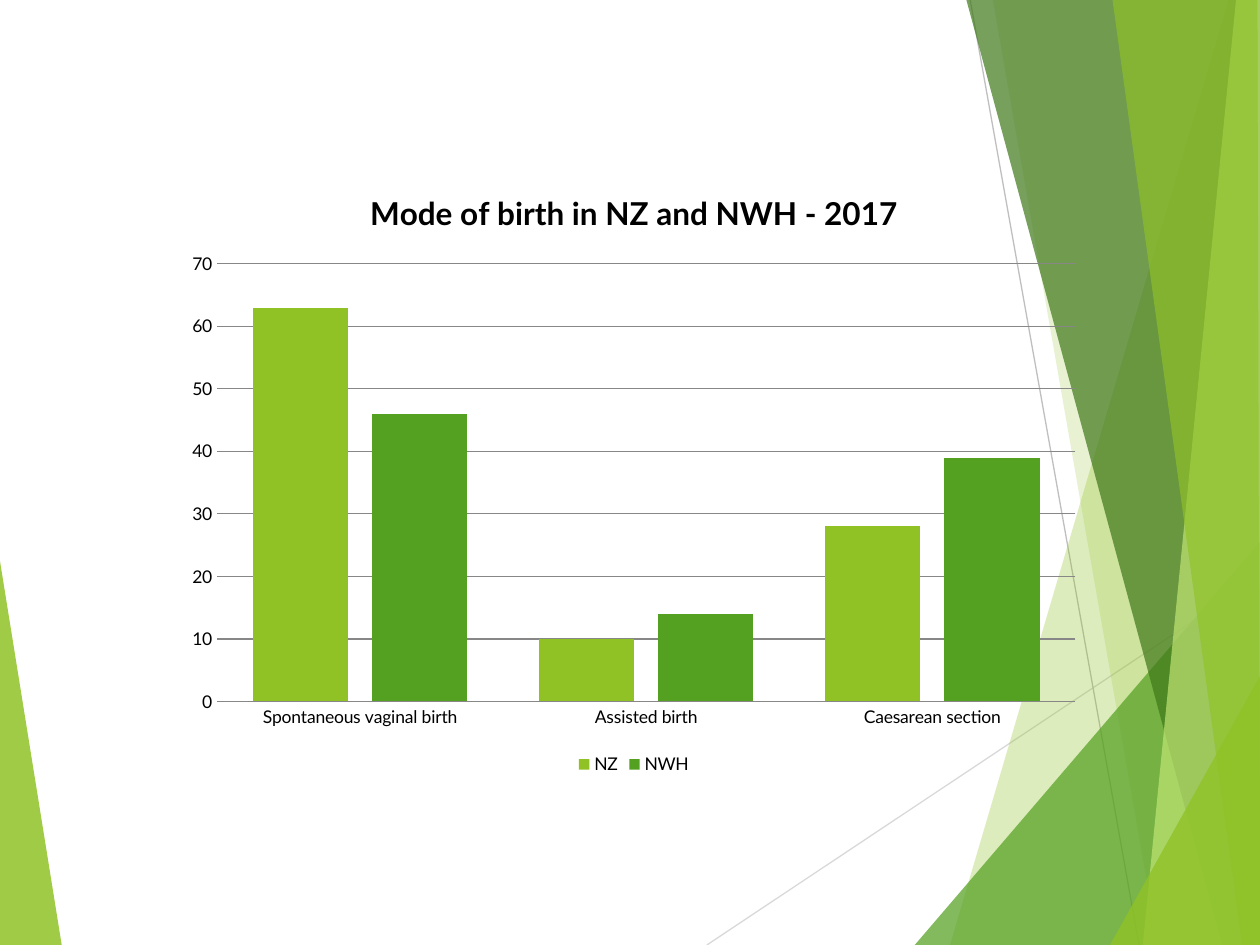
from pptx import Presentation
from pptx.chart.data import CategoryChartData
from pptx.dml.color import RGBColor
from pptx.enum.chart import XL_CHART_TYPE, XL_LEGEND_POSITION, XL_TICK_MARK
from pptx.enum.shapes import MSO_CONNECTOR
from pptx.oxml.ns import qn
from pptx.util import Inches, Pt
from lxml import etree

COLUMNS = XL_CHART_TYPE.COLUMN_CLUSTERED
BOTTOM = XL_LEGEND_POSITION.BOTTOM
NO_TICK = XL_TICK_MARK.NONE
STRAIGHT = MSO_CONNECTOR.STRAIGHT

LIME = RGBColor(0x90, 0xC2, 0x26)
GREEN = RGBColor(0x54, 0xA0, 0x21)
DARK_GREEN = RGBColor(0x3F, 0x78, 0x19)
PALE_LIME = RGBColor(0xC0, 0xE4, 0x74)
LIGHT_GREY = RGBColor(0xD9, 0xD9, 0xD9)
MID_GREY = RGBColor(0xBF, 0xBF, 0xBF)
GRID_GREY = RGBColor(0x87, 0x87, 0x87)
BLACK = RGBColor(0, 0, 0)


class SlideBuilder:
    """Holds the style and the current slide."""

    font = "Lato"

    def __init__(self, slide):
        self.slide = slide

    def facet(self, points, color, opacity):
        """Translucent polygon; opacity in percent."""
        pts = [(Inches(x), Inches(y)) for x, y in points]
        fb = self.slide.shapes.build_freeform(*pts[0])
        fb.add_line_segments(pts[1:], close=True)
        sp = fb.convert_to_shape()
        sp.shadow.inherit = False
        sp.fill.solid()
        sp.fill.fore_color.rgb = color
        sp.line.fill.background()
        clr = sp.fill._xPr.find(qn("a:solidFill"))[0]
        etree.SubElement(clr, qn("a:alpha"), val=str(opacity * 1000))

    def line(self, start, end, color):
        ends = [Inches(v) for v in (*start, *end)]
        cxn = self.slide.shapes.add_connector(STRAIGHT, *ends)
        cxn.line.color.rgb = color
        cxn.line.width = Pt(0.75)
        etree.SubElement(cxn._element.spPr, qn("a:effectLst"))

    def set_font(self, font, size, bold=False):
        font.name = self.font
        font.size = Pt(size)
        font.bold = bold
        font.color.rgb = BLACK

    def column_chart(self, box, title, categories, series):
        data = CategoryChartData()
        data.categories = categories
        for name, values, _ in series:
            data.add_series(name, values)
        frame = self.slide.shapes.add_chart(COLUMNS, *[Inches(v) for v in box], data)
        chart = frame.chart
        self.set_font(chart.font, 10)

        # Title and legend
        chart.has_title = True
        p = chart.chart_title.text_frame.paragraphs[0]
        p.text = title
        self.set_font(p.font, 18, bold=True)
        chart.chart_title.include_in_layout = False
        chart.has_legend = True
        chart.legend.position = BOTTOM
        chart.legend.include_in_layout = False

        # Axes
        for axis in (chart.category_axis, chart.value_axis):
            axis.major_tick_mark = NO_TICK
            axis.minor_tick_mark = NO_TICK
        chart.category_axis.format.line.color.rgb = GRID_GREY
        axis = chart.value_axis
        axis.minimum_scale, axis.maximum_scale, axis.major_unit = 0, 70, 10
        axis.format.line.fill.background()
        axis.major_gridlines.format.line.color.rgb = GRID_GREY
        axis.major_gridlines.format.line.width = Pt(0.75)

        # Columns
        plot = chart.plots[0]
        plot.vary_by_categories = False
        plot.gap_width, plot.overlap = 75, -25
        for ser, (_, _, color) in zip(plot.series, series):
            ser.format.fill.solid()
            ser.format.fill.fore_color.rgb = color


def main():
    prs = Presentation()
    prs.slide_width, prs.slide_height = Inches(10), Inches(7.5)
    s = SlideBuilder(prs.slides.add_slide(prs.slide_layouts[6]))

    # Left facet and thin lines
    s.facet([(-0.01, 4.39), (0.49, 7.5), (-0.01, 7.5)], LIME, 85)
    s.line((5.61, 7.5), (10.01, 4.57), LIGHT_GREY)
    s.line((7.7, 0), (9.04, 7.5), MID_GREY)

    # Right facets, back to front
    right = 10.01
    facets = [
        ([(9.75, 0), (7.54, 7.5), (right, 7.5), (right, 0)], LIME, 30),
        ([(7.88, 0), (9.19, 7.5), (right, 7.5), (right, 0)], LIME, 20),
        ([(7.26, 7.5), (right, 4.29), (right, 7.5)], GREEN, 72),
        ([(7.67, 0), (9.7, 7.5), (right, 7.5), (right, 0)], DARK_GREEN, 70),
        ([(9.81, 0), (9.07, 7.5), (right, 7.5), (right, 0)], PALE_LIME, 70),
        ([(8.83, 0), (9.86, 7.5), (10, 7.5), (9.98, 0)], LIME, 65),
        ([(8.81, 7.5), (right, 5.35), (right, 7.5)], LIME, 80),
    ]
    for points, color, opacity in facets:
        s.facet(points, color, opacity)

    # Chart
    s.column_chart(
        (1.38, 1.31, 7.3, 4.88),
        "Mode of birth in NZ and NWH - 2017",
        ["Spontaneous vaginal birth", "Assisted birth", "Caesarean section"],
        [("NZ", (63, 10, 28), LIME), ("NWH", (46, 14, 39), GREEN)],
    )
    prs.save("out.pptx")


if __name__ == "__main__":
    main()
